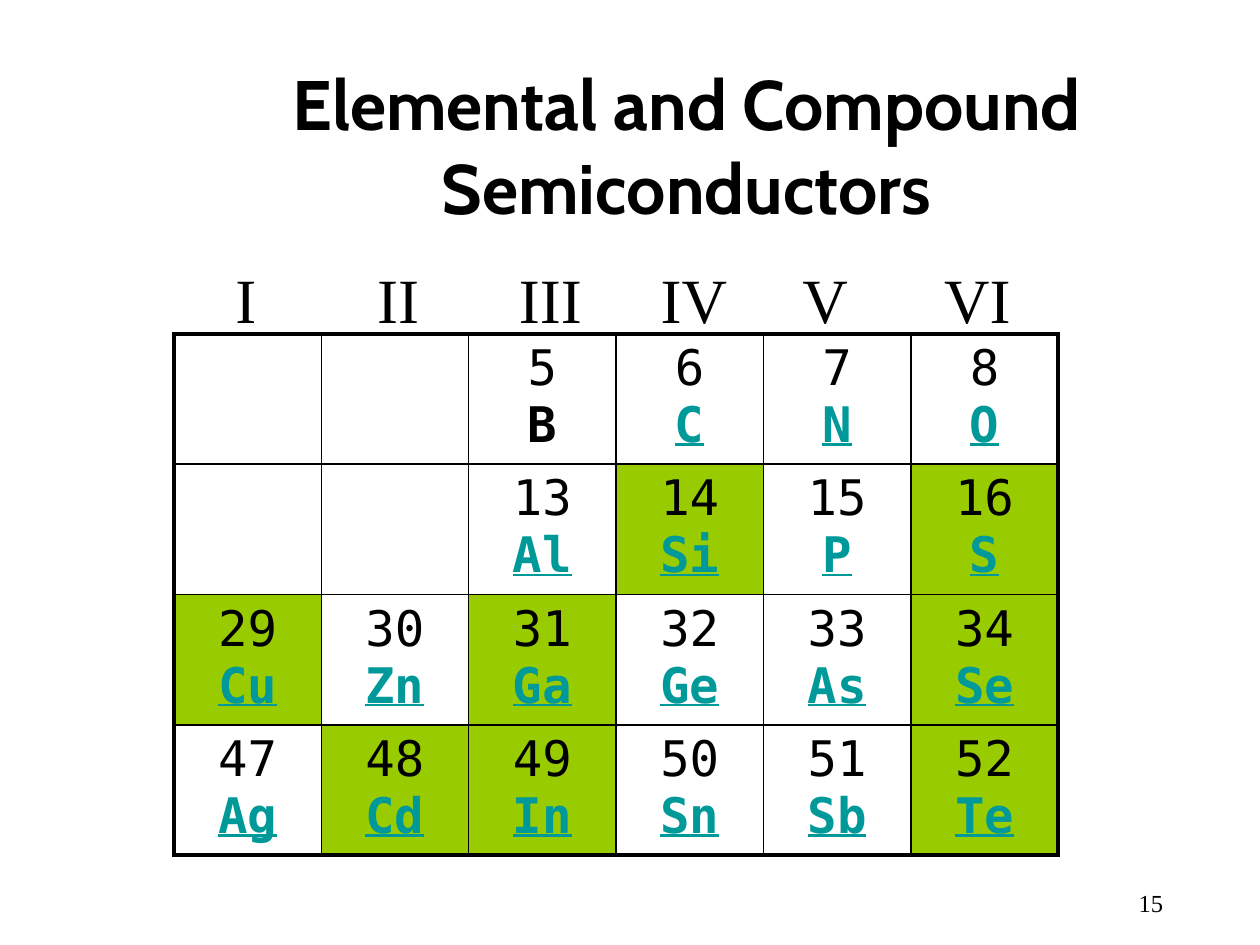
"""Slide with a table of the elements that make up semiconductors."""
from lxml import etree
from pptx import Presentation, util as u
from pptx.dml.color import RGBColor as Rgb
from pptx.enum import text as t
from pptx.oxml import ns

HUES = {"ink": "000000", "link": "009999", "mark": "99CC00", "plain": "FFFFFF"}
HEADS = ["I", "II", "III", "IV", "V", "VI"]
ROWS = [
    [None, None, "5 B", "6 C", "7 N", "8 O"],
    [None, None, "13 Al", "14 Si", "15 P", "16 S"],
    ["29 Cu", "30 Zn", "31 Ga", "32 Ge", "33 As", "34 Se"],
    ["47 Ag", "48 Cd", "49 In", "50 Sn", "51 Sb", "52 Te"],
]
MARKED = {"Si", "S", "Cu", "Ga", "Se", "Cd", "In", "Te"}
COL, ROW, TAB = 1.17, 1.0, 1.125


def style(run, face, size, hue="ink", bold=False):
    font = run.font
    font.name, font.size, font.bold = face, u.Pt(size), bold
    font.color.rgb = Rgb.from_string(HUES[hue])


def label(words, spot, face, size, align, anchor, bold=False):
    box = slide.shapes.add_textbox(*[u.Inches(n) for n in spot])
    frame = box.text_frame
    frame.word_wrap = True
    frame.vertical_anchor = anchor
    frame.text = words
    para = frame.paragraphs[0]
    para.alignment = align
    style(para.runs[0], face, size, bold=bold)
    return para


deck = Presentation()
deck.slide_width, deck.slide_height = u.Inches(10), u.Inches(7.5)
slide = deck.slides.add_slide(deck.slide_layouts[6])

label("Elemental and Compound Semiconductors", (1.14, 0.52, 8.62, 1.25),
      "Cabin", 40, t.PP_ALIGN.CENTER, t.MSO_ANCHOR.MIDDLE, True)

grid = slide.shapes.add_table(
    len(ROWS), len(HEADS), u.Inches(1.38), u.Inches(2.65),
    u.Inches(COL * len(HEADS)), u.Inches(ROW * len(ROWS))).table
grid.first_row = grid.horz_banding = False

for r, row in enumerate(ROWS):
    for c, entry in enumerate(row):
        cell = grid.cell(r, c)
        props = cell._tc.get_or_add_tcPr()
        outer = {"L": c == 0, "R": c == len(HEADS) - 1,
                 "T": r == 0, "B": r == len(ROWS) - 1}
        for side, edge in outer.items():
            line = etree.SubElement(props, ns.qn("a:ln" + side),
                                    w=str(u.Pt(2.25 if edge else 1)))
            fill = etree.SubElement(line, ns.qn("a:solidFill"))
            etree.SubElement(fill, ns.qn("a:srgbClr"), val=HUES["ink"])
        number, symbol = entry.split() if entry else ("", "")
        cell.fill.solid()
        cell.fill.fore_color.rgb = Rgb.from_string(
            HUES["mark" if symbol in MARKED else "plain"])
        if not entry:
            continue
        para = cell.text_frame.paragraphs[0]
        para.text = f"{number}\v{symbol}"
        para.alignment = t.PP_ALIGN.CENTER
        linked = symbol != "B"
        top, low = para.runs
        style(top, "DejaVu Sans Mono", 28)
        style(low, "DejaVu Sans Mono", 28, "link" if linked else "ink", True)
        low.font.underline = linked

heads = label("\t".join(HEADS), (1.77, 2.02, 6.61, 0.7), "Times New Roman", 36,
              t.PP_ALIGN.LEFT, t.MSO_ANCHOR.TOP)
stops = etree.SubElement(heads._p.get_or_add_pPr(), ns.qn("a:tabLst"))
for n in range(1, len(HEADS)):
    etree.SubElement(stops, ns.qn("a:tab"), pos=str(u.Inches(TAB * n)), algn="l")

label("15", (7.25, 6.83, 2.08, 0.5), "Times New Roman", 14,
      t.PP_ALIGN.RIGHT, t.MSO_ANCHOR.BOTTOM)

deck.save("out.pptx")
